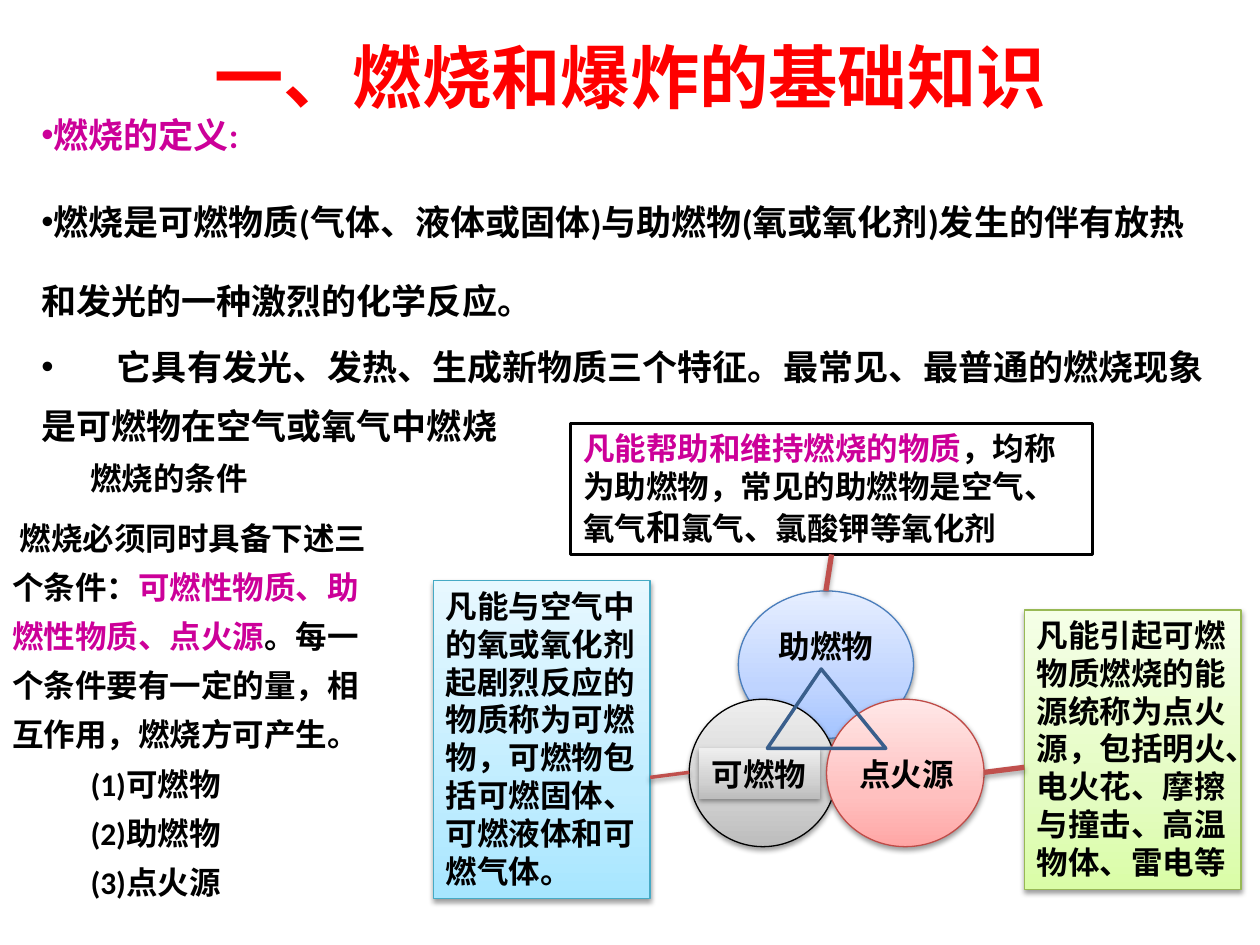
from lxml import etree
from pptx import Presentation
from pptx import util as u
from pptx.dml.color import RGBColor
from pptx.enum import shapes, text
from pptx.oxml.ns import qn

BLACK, PINK, RED = "000000", "CC0099", "C0504D"
GRAY = ("BDBDBD", "D1D1D1", "EEEEEE")
KIND = shapes.MSO_SHAPE


def hue(code):
    """Turn a hex string into a colour."""
    return RGBColor.from_string(code)


def place(at):
    """Turn numbers into inch lengths."""
    return [u.Inches(n) for n in at]


def sub(node, tag, **attrs):
    """Add a drawing element with attributes."""
    return etree.SubElement(node, qn("a:" + tag), {k: str(v) for k, v in attrs.items()})


def write(para, words, size=18, color=BLACK, bold=True):
    """Add one formatted run to a paragraph."""
    run = para.add_run()
    run.text = words
    font = run.font
    font.name, font.size, font.bold = "Calibri", u.Pt(size), bold
    font.color.rgb = hue(color)


def fill_text(frame, paras, wrap=True, align=text.PP_ALIGN.LEFT,
              anchor=text.MSO_ANCHOR.TOP):
    """Fill a frame with paragraphs given as lists of (words, format)."""
    frame.word_wrap = wrap
    frame.auto_size = text.MSO_AUTO_SIZE.NONE
    frame.vertical_anchor = anchor
    for i, runs in enumerate(paras):
        para = frame.add_paragraph() if i else frame.paragraphs[0]
        para.alignment = align
        for words, style in runs:
            write(para, words, **style)
    return frame.paragraphs


def label(slide, at, paras, **style):
    """Add a text box."""
    box = slide.shapes.add_textbox(*place(at))
    return fill_text(box.text_frame, paras, **style)


def shade(shape, alpha=38, dist=1.6):
    """Give a shape or connector a soft shadow below it."""
    props = shape._element.spPr
    for old in props.findall(qn("a:effectLst")):
        props.remove(old)
    cast = sub(sub(props, "effectLst"), "outerShdw", blurRad=u.Pt(3.1),
               dist=u.Pt(dist), dir=5400000, rotWithShape=0)
    sub(sub(cast, "srgbClr", val=BLACK), "alpha", val=alpha * 1000)


def blend(shape, colors):
    """Fill a shape with three colours rising from its bottom."""
    shape.fill.gradient()
    shape.fill.gradient_angle = 90
    stops = shape._element.spPr.find(".//" + qn("a:gsLst"))
    for old in list(stops):
        stops.remove(old)
    for pos, color in zip((0, 35, 100), colors):
        sub(sub(stops, "gs", pos=pos * 1000), "srgbClr", val=color)


def block(slide, kind, at, line=None, width=0.75, fill=None, grad=None):
    """Add a preset shape."""
    shape = slide.shapes.add_shape(kind, *place(at))
    shape.shadow.inherit = False
    if fill:
        shape.fill.solid()
        shape.fill.fore_color.rgb = hue(fill)
    elif grad:
        blend(shape, grad)
    else:
        shape.fill.background()
    if line:
        shape.line.color.rgb = hue(line)
        shape.line.width = u.Pt(width)
    else:
        shape.line.fill.background()
    if grad:
        shade(shape)
    return shape


def link(slide, ends, width=3, alpha=35, dist=1.8):
    """Add a shaded straight connector."""
    line = slide.shapes.add_connector(shapes.MSO_CONNECTOR.STRAIGHT, *place(ends))
    line.line.color.rgb = hue(RED)
    line.line.width = u.Pt(width)
    shade(line, alpha, dist)
    return line


def bullet(para, spacing, tab=None):
    """Set line spacing, a bullet and an optional tab stop."""
    para.line_spacing = spacing
    props = para._p.get_or_add_pPr()
    props.set("marL", "0")
    props.set("indent", "0")
    sub(props, "buFont", typeface="Arial")
    sub(props, "buChar", char="•")
    if tab:
        sub(sub(props, "tabLst"), "tab", pos=u.Inches(tab), algn="l")


def add_intro(slide):
    """Add the title and the definition of burning."""
    title = slide.shapes.title
    title.left, title.top, title.width, title.height = place((0.5, 0.3, 9, 1.25))
    frame = title.text_frame
    frame.margin_top, frame.margin_bottom = 0, u.Inches(0.65)
    fill_text(frame, [[("一、燃烧和爆炸的基础知识", dict(size=39.6, color="FF0000"))]],
              align=text.PP_ALIGN.CENTER, anchor=text.MSO_ANCHOR.MIDDLE)
    body = dict(size=20)
    paras = label(slide, (0.23, 0.55, 9.45, 5.53), [
        [("燃烧的定义:", dict(size=20, color=PINK))],
        [("燃烧是可燃物质(气体、液体或固体)与助燃物(氧或氧化剂)发生的伴有放热和发光的一种激烈的化学反应。", body)],
        [("\t它具有发光、发热、生成新物质三个特征。最常见、最普通的燃烧现象是可燃物在空气或氧气中燃烧", body)]])
    for para, spacing, tab in zip(paras, (1.9, 1.9, 1.4), (None, None, 0.6)):
        bullet(para, spacing, tab)
    for para in paras[1:]:
        para.space_before = u.Pt(4)


def add_terms(slide):
    """Add the conditions of burning."""
    label(slide, (0.62, 3.59, 1.46, 0.4), [[("燃烧的条件", {})]], wrap=False)
    names = ("(1)可燃物", "(2)助燃物", "(3)点火源")
    paras = label(slide, (0, 3.98, 3.12, 3.25), [
        [(" 燃烧必须同时具备下述三个条件：".strip(), {}),
         ("可燃性物质、助燃性物质、点火源", dict(color=PINK)),
         ("。每一个条件要有一定的量，相互作用，燃烧方可产生。", {})],
        *[[(name, {})] for name in names]])
    for i, para in enumerate(paras):
        para.line_spacing = 1.3
        props = para._p.get_or_add_pPr()
        props.set("marL", str(u.Inches(0.62) if i else 0))
        props.set("indent", str(0 if i else u.Inches(0.06)))


def add_figure(slide):
    """Add the three circles, their notes and the links."""
    rect, oval = KIND.RECTANGLE, KIND.OVAL
    top = block(slide, rect, (4.53, 3.36, 4.14, 1.04), BLACK, 2, fill="FFFFFF")
    fill_text(top.text_frame, [[
        ("凡能帮助和维持燃烧的物质", dict(color=PINK)),
        ("，均称为助燃物，常见的助燃物是空气、氧气", {}),
        ("和", dict(size=20)), ("氯气、氯酸钾等氧化剂", {})]])
    notes = (
        ((3.44, 4.61, 1.72, 2.52), "46AAC5", ("A7E6FF", "C1EDFF", "E7F8FF"),
         "凡能与空气中的氧或氧化剂起剧烈反应的物质称为可燃物，可燃物包括可燃固体、可燃液体和可燃气体。"),
        ((8.13, 4.84, 1.72, 2.22), "98B955", ("DAFDA7", "E4FCC2", "F5FFE7"),
         "凡能引起可燃物质燃烧的能源统称为点火源，包括明火、电火花、摩擦与撞击、高温物体、雷电等"))
    for at, line, grad, words in notes:
        note = block(slide, rect, at, line, grad=grad)
        fill_text(note.text_frame, [[(words, {})]])

    air = block(slide, oval, (5.86, 4.69, 1.39, 1.17), "4B7EBC",
                grad=("A4C4FF", "BFD4FF", "E6EEFF"))
    air.text_frame.margin_bottom = u.Inches(0.35)
    fill_text(air.text_frame, [[("助燃物", {})]], align=text.PP_ALIGN.CENTER,
              anchor=text.MSO_ANCHOR.MIDDLE)
    block(slide, oval, (5.47, 5.55, 1.17, 1.17), BLACK, grad=GRAY)
    block(slide, oval, (6.56, 5.55, 1.25, 1.17), "BF4C48",
          grad=("FFA6A5", "FFC0BF", "FFE7E7"))
    label(slide, (6.72, 5.94, 0.96, 0.4), [[("点火源", {})]], wrap=False)
    fuel = block(slide, rect, (5.55, 5.94, 0.96, 0.4), grad=GRAY)
    fill_text(fuel.text_frame, [[("可燃物", {})]], wrap=False)
    peak = block(slide, KIND.ISOSCELES_TRIANGLE, (6.09, 5.31, 0.94, 0.63), "3A5F8C", 2)
    peak.adjustments[0] = 0.455

    stem = link(slide, (6.6, 4.4, 6.55, 4.69))
    stem.begin_connect(top, 2)
    stem.end_connect(air, 0)
    link(slide, (5.16, 6.17, 5.47, 6.13), 2, 38, 1.6)
    link(slide, (7.81, 6.13, 8.13, 6.09))


def main():
    """Build and save the slide."""
    deck = Presentation()
    deck.slide_width, deck.slide_height = place((10, 7.5))
    slide = deck.slides.add_slide(deck.slide_layouts[5])
    add_intro(slide)
    add_terms(slide)
    add_figure(slide)
    deck.save("out.pptx")


if __name__ == "__main__":
    main()
